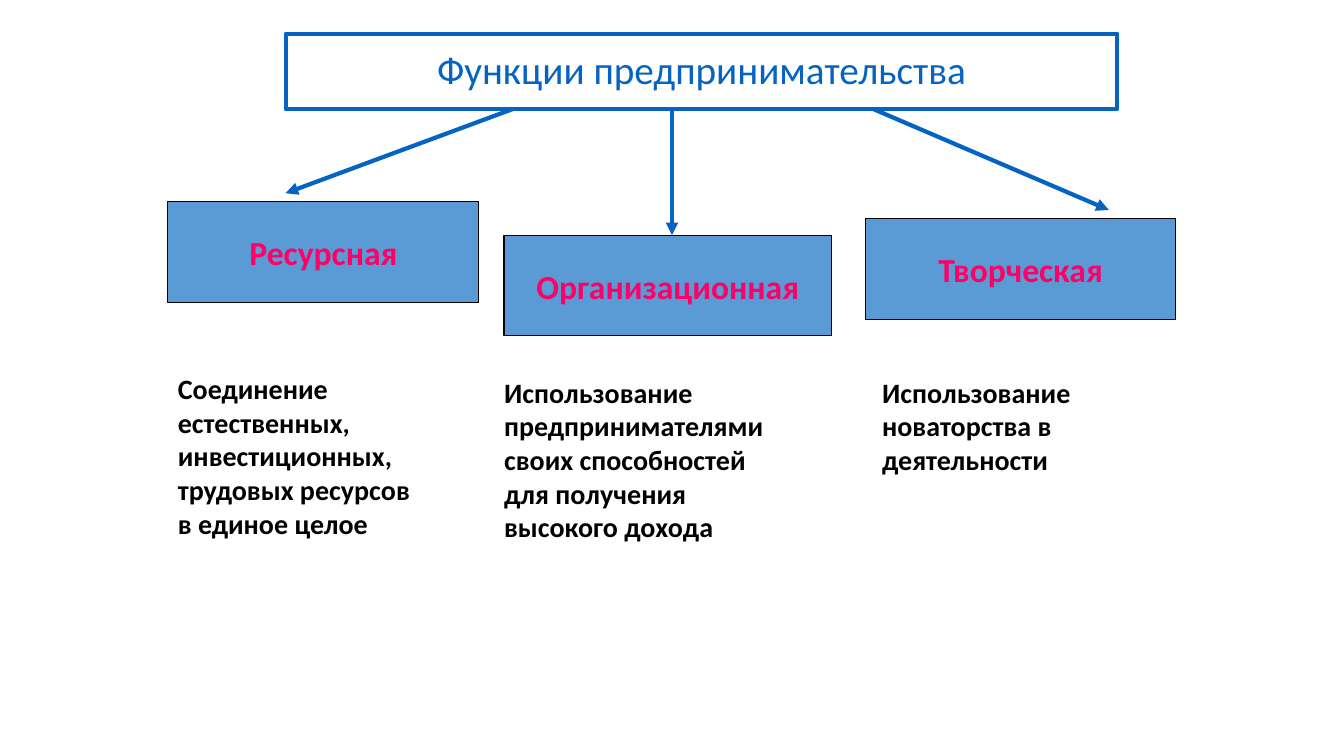
"""Build a slide with a chart of the functions of entrepreneurship."""
from dataclasses import dataclass

import pptx
import pptx.dml.color
import pptx.enum.shapes
import pptx.enum.text
import pptx.oxml
import pptx.oxml.ns
import pptx.util

Pt = pptx.util.Pt
ALIGN = pptx.enum.text.PP_ALIGN
ANCHOR = pptx.enum.text.MSO_ANCHOR
FIT = pptx.enum.text.MSO_AUTO_SIZE


@dataclass(frozen=True)
class Theme:
    font: str = "Calibri"
    blue: str = "0563C1"
    fill: str = "5B9BD5"
    pink: str = "FF0066"
    black: str = "000000"
    title_size: int = 28
    name_size: int = 24
    body_size: int = 20


THEME = Theme()

FUNCTIONS = [
    {
        "name": "Ресурсная",
        "frame": (120, 144, 222, 72),
        "arrow": (366, 78, 204, 138),
        "lines": ["Соединение", "естественных,", "инвестиционных,",
                  "трудовых ресурсов", "в единое целое"],
        "lines_frame": (120, 262, 186.5, 128),
    },
    {
        "name": "Организационная",
        "frame": (360, 168, 234, 72),
        "arrow": (480, 78, 480, 168),
        "lines": ["Использование", "предпринимателями", "своих способностей",
                  "для получения", "высокого дохода"],
        "lines_frame": (353, 264.5, 206, 128),
    },
    {
        "name": "Творческая",
        "frame": (618, 156, 222, 72),
        "arrow": (624, 78, 792, 150),
        "lines": ["Использование", "новаторства в", "деятельности"],
        "lines_frame": (623, 264.5, 149.5, 80),
    },
]


def rgb(code):
    return pptx.dml.color.RGBColor.from_string(code)


def points(lengths):
    return [Pt(length) for length in lengths]


def write(frame, lines, *, size, color, bold=False, align=ALIGN.LEFT,
          anchor=ANCHOR.TOP, wrap=False, fit=FIT.NONE, spacing=1.0):
    frame.auto_size = fit
    frame.word_wrap = wrap
    frame.vertical_anchor = anchor
    for index, line in enumerate(lines):
        para = frame.paragraphs[0] if index == 0 else frame.add_paragraph()
        para.alignment = align
        para.line_spacing = spacing
        span = para.add_run()
        span.text = line
        span.font.name = THEME.font
        span.font.size = Pt(size)
        span.font.bold = bold
        span.font.color.rgb = rgb(color)


def outline(shape, color, width):
    shape.line.color.rgb = rgb(color)
    shape.line.width = Pt(width)


def add_title(slide, text, frame):
    title = slide.shapes.title
    title.left, title.top, title.width, title.height = points(frame)
    outline(title, THEME.blue, 3)
    write(title.text_frame, [text], size=THEME.title_size, color=THEME.blue,
          align=ALIGN.CENTER, anchor=ANCHOR.MIDDLE, wrap=True, spacing=0.9)


def add_arrow(slide, ends):
    arrow = slide.shapes.add_connector(
        pptx.enum.shapes.MSO_CONNECTOR.STRAIGHT, *points(ends))
    outline(arrow, THEME.blue, 3)
    head = pptx.oxml.parse_xml(
        f'<a:tailEnd {pptx.oxml.ns.nsdecls("a")} type="triangle"/>')
    arrow.line._get_or_add_ln().append(head)
    arrow._element.spPr.append(pptx.oxml.parse_xml(
        f'<a:effectLst {pptx.oxml.ns.nsdecls("a")}/>'))


def add_name_box(slide, text, frame):
    box = slide.shapes.add_shape(
        pptx.enum.shapes.MSO_SHAPE.RECTANGLE, *points(frame))
    box.shadow.inherit = False
    box.fill.solid()
    box.fill.fore_color.rgb = rgb(THEME.fill)
    outline(box, THEME.black, 0.75)
    write(box.text_frame, [text], size=THEME.name_size, color=THEME.pink,
          bold=True, align=ALIGN.CENTER, anchor=ANCHOR.MIDDLE)


def add_description(slide, lines, frame):
    box = slide.shapes.add_textbox(*points(frame))
    write(box.text_frame, lines, size=THEME.body_size, color=THEME.black,
          bold=True, fit=FIT.SHAPE_TO_FIT_TEXT)


def main():
    deck = pptx.Presentation()
    deck.slide_width, deck.slide_height = points((960, 540))
    slide = deck.slides.add_slide(deck.slide_layouts.get_by_name("Title Only"))
    add_title(slide, "Функции предпринимательства", (204, 24, 594, 54))
    for function in FUNCTIONS:
        add_arrow(slide, function["arrow"])
        add_name_box(slide, function["name"], function["frame"])
        add_description(slide, function["lines"], function["lines_frame"])
    deck.save("out.pptx")


if __name__ == "__main__":
    main()
